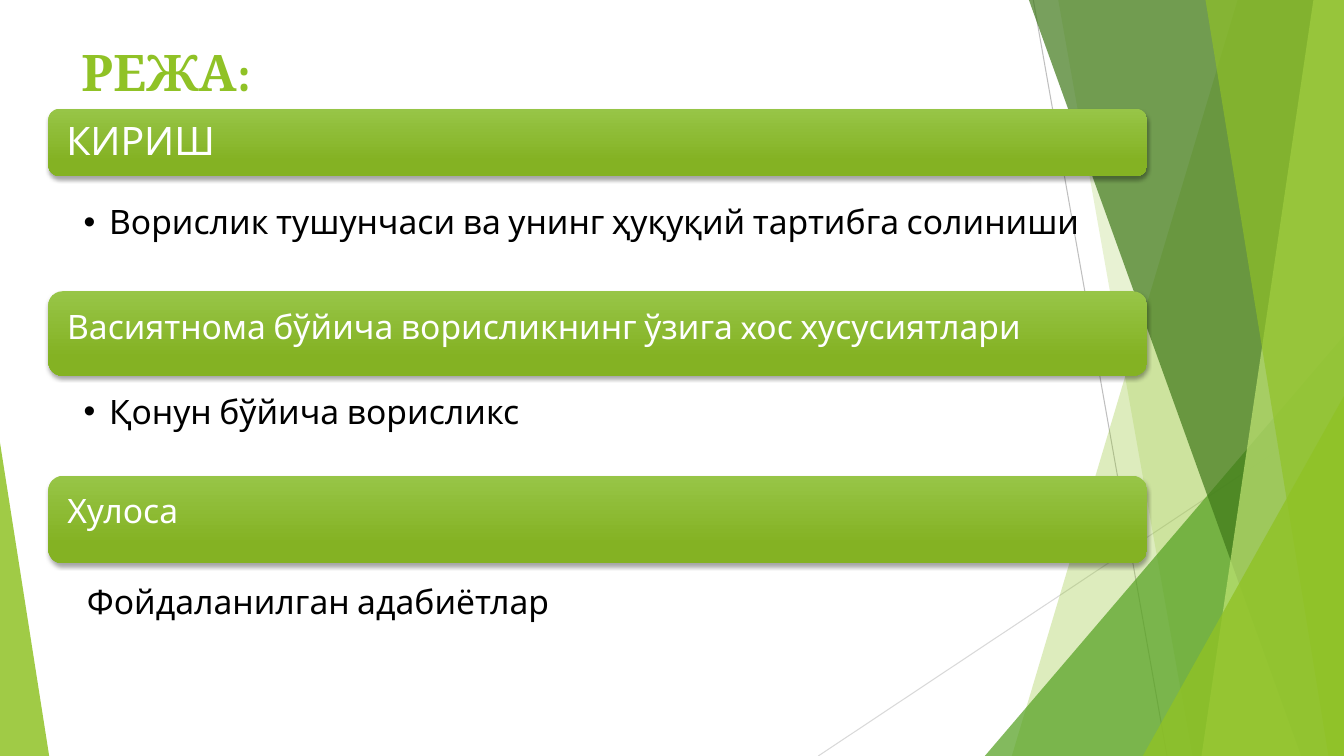
from lxml import etree
from pptx import Presentation
from pptx import util as u
from pptx.dml.color import RGBColor
from pptx.enum import shapes, text
from pptx.oxml import ns

Cm, Pt = u.Cm, u.Pt
WIDTH, HEIGHT = 33.87, 19.05
LIME = "90C226"


def colour(hex_code):
    return RGBColor.from_string(hex_code)


def add_xml(parent, tag, **attributes):
    return etree.SubElement(parent, ns.qn(tag), **attributes)


def paint(shape, hex_code, opacity):
    shape.fill.solid()
    shape.fill.fore_color.rgb = colour(hex_code)
    shape.line.fill.background()
    shape.shadow.inherit = False
    fill_colour = shape.fill._xPr.find(ns.qn("a:solidFill"))[0]
    add_xml(fill_colour, "a:alpha", val=str(opacity * 1000))


def write(frame, words, font, size, hex_code, insets, anchor, bold=False):
    frame.word_wrap = True
    frame.margin_left, frame.margin_top, frame.margin_right, frame.margin_bottom = map(Cm, insets)
    frame.vertical_anchor = anchor
    frame.text = words
    paragraph = frame.paragraphs[0]
    paragraph.alignment = text.PP_ALIGN.LEFT
    style = paragraph.runs[0].font
    style.name, style.size, style.bold = font, Pt(size), bold
    style.color.rgb = colour(hex_code)
    return paragraph


# Background facets
def thin_line(slide, start, end, hex_code):
    line = slide.shapes.add_connector(shapes.MSO_CONNECTOR.STRAIGHT,
                                      *map(Cm, (*start, *end)))
    line.line.color.rgb = colour(hex_code)
    line.line.width = Pt(0.75)
    add_xml(line._element.spPr, "a:effectLst")


def slanted_facet(slide, right, top, bottom, upper, lower, hex_code, opacity):
    """Fills from a slanted left edge to the right side."""
    outline = slide.shapes.build_freeform(Cm(upper), Cm(top))
    outline.add_line_segments([(Cm(x), Cm(y)) for x, y in
                               ((right, top), (right, bottom), (lower, bottom))])
    paint(outline.convert_to_shape(), hex_code, opacity)


def corner_facet(slide, left, top, right, bottom, apex, hex_code, opacity):
    corner = slide.shapes.add_shape(shapes.MSO_SHAPE.ISOSCELES_TRIANGLE,
                                    Cm(left), Cm(top), Cm(right - left), Cm(bottom - top))
    corner.adjustments[0] = apex
    paint(corner, hex_code, opacity)


def facets(slide, left, top, width, height):
    right, bottom = left + width, top + height

    def slant(upper, lower, hex_code, opacity):
        slanted_facet(slide, right, top, bottom, left + upper, left + lower,
                      hex_code, opacity)

    thin_line(slide, (left + 26.04, top), (left + 29.41, bottom), "BFBFBF")
    thin_line(slide, (right, top + 10.24), (left + 20.62, bottom), "D9D9D9")
    slant(31.19, 25.5, LIME, 30)
    slant(26.67, 30.05, LIME, 20)
    corner_facet(slide, left + 24.82, top + 8.46, right, bottom, 1, "54A021", 72)
    slant(25.93, 32.79, "3F7819", 70)
    slant(33.1, 30.28, "C0E474", 70)
    slant(30.38, 33.48, LIME, 65)
    corner_facet(slide, left + 28.8, top + 9.98, right, bottom, 1, LIME, 80)
    corner_facet(slide, left, top + 11.15, left + 1.24, bottom, 0, LIME, 85)


# Title
def heading(slide, left, top, width, height):
    title = slide.shapes.add_textbox(Cm(left), Cm(top), Cm(width), Cm(height))
    write(title.text_frame, "РЕЖА:", "Cambria", 36, LIME, (0.25, 0.13, 0.25, 0.13),
          text.MSO_ANCHOR.MIDDLE, bold=True)


# Plan: green bars, each with a line below it
def section_bar(slide, left, top, width, height, words, size, anchor):
    bar = slide.shapes.add_shape(shapes.MSO_SHAPE.ROUNDED_RECTANGLE,
                                 Cm(left), Cm(top), Cm(width), Cm(height))
    bar.fill.gradient()
    bar.fill.gradient_angle = 270
    for stop, position, shade in zip(bar.fill.gradient_stops, (0, 0.78), ("97C547", "84B223")):
        stop.position = position
        stop.color.rgb = colour(shade)
    bar.line.fill.background()
    bar.shadow.inherit = False
    effects = bar._element.spPr.find(ns.qn("a:effectLst"))
    shadow = add_xml(effects, "a:outerShdw", blurRad=str(Pt(3)), dist=str(Pt(2)),
                     dir="5400000", rotWithShape="0")
    add_xml(add_xml(shadow, "a:srgbClr", val="000000"), "a:alpha", val="35000")
    paragraph = write(bar.text_frame, words, "Cabin", size, "FFFFFF", (0.37,) * 4, anchor)
    paragraph.line_spacing = 0.9


def section_point(slide, left, top, width, height, words, hanging, bulleted):
    point = slide.shapes.add_textbox(Cm(left), Cm(top), Cm(width), Cm(height))
    paragraph = write(point.text_frame, words, "Cabin", 24, "000000",
                      (0.89, 0.08, 0.48, 0.08), text.MSO_ANCHOR.TOP)
    paragraph.line_spacing = 0.9
    properties = paragraph._p.get_or_add_pPr()
    properties.set("marL", str(Cm(hanging)))
    properties.set("indent", str(-Cm(hanging)))
    if bulleted:
        add_xml(properties, "a:buFont", typeface="Arial")
        add_xml(properties, "a:buChar", char="•")
    else:
        add_xml(properties, "a:buNone")


def plan(slide, left, top, width):
    middle, upper = text.MSO_ANCHOR.MIDDLE, text.MSO_ANCHOR.TOP
    bars = (
        (0, 1.7, "КИРИШ", 28, middle),
        (4.6, 2.13, "Васиятнома бўйича ворисликнинг ўзига xос хусусиятлари", 24, upper),
        (9.25, 2.21, "Хулоса", 24, upper),
    )
    points = (
        (0, 2.37, 1.68, "Ворислик тушунчаси ва унинг ҳуқуқий тартибга солиниши", 0.64, True),
        (0, 7.14, 1.42, "Қонун бўйича ворисликс", 0.64, True),
        (0.08, 11.94, 1.47, "Фойдаланилган адабиётлар", 0.48, False),
    )
    for bar, point in zip(bars, points):
        offset, height, *label = bar
        section_bar(slide, left, top + offset, width, height, *label)
        inset, offset, height, *label = point
        section_point(slide, left + inset, top + offset, width - 2 * inset, height, *label)


def main():
    deck = Presentation()
    deck.slide_width, deck.slide_height = Cm(WIDTH), Cm(HEIGHT)
    slide = deck.slides.add_slide(deck.slide_layouts[6])
    facets(slide, 0, 0, WIDTH, HEIGHT)
    heading(slide, 1.8, 0.84, 23.88, 1.9)
    plan(slide, 1.22, 2.74, 27.69)
    deck.save("out.pptx")


if __name__ == "__main__":
    main()
